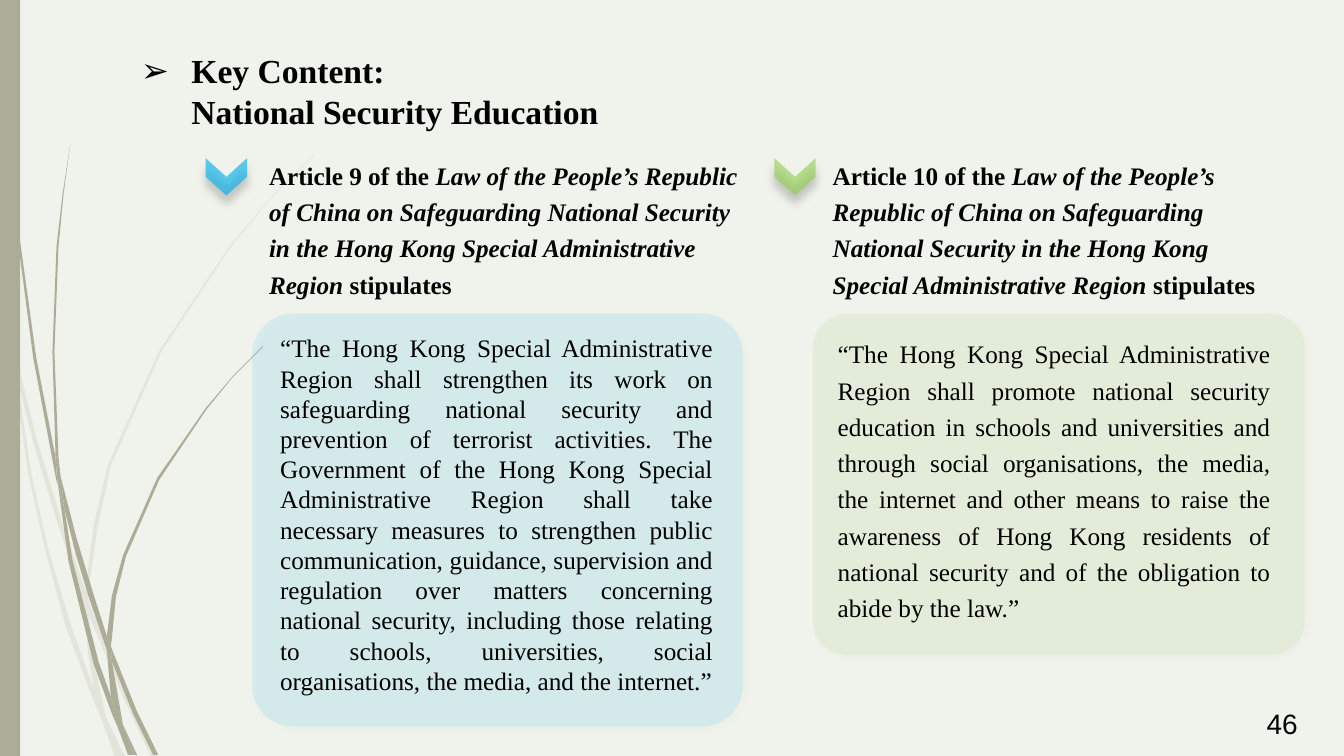
from dataclasses import dataclass

import pptx
import pptx.dml.color
import pptx.enum.shapes
import pptx.enum.text
import pptx.oxml
import pptx.oxml.ns
import pptx.util
from lxml import etree

Inches = pptx.util.Inches
Pt = pptx.util.Pt
SHAPES = pptx.enum.shapes.MSO_SHAPE
ALIGN = pptx.enum.text.PP_ALIGN


@dataclass(frozen=True)
class Theme:
    stem: str = "766F54"
    wash: str = "E3E9DB"
    blue: str = "00B0F0"
    green: str = "92D050"
    text: str = "000000"
    serif: str = "Times New Roman"
    sans: str = "Arial"
    title_size: int = 24
    body_size: int = 18
    number_size: int = 20


THEME = Theme()

# Each blade of grass is an outline in inches on the slide.
PALE_BLADES = [
    [(0.11, 3.5), (0.09, 3.22), (0, 2.82), (0, 2.99), (0.1, 3.44)],
    [(0.58, 5.22), (0.84, 5.99), (0.85, 5.86), (0.62, 5.2), (0.36, 4.34), (0.14, 3.45),
     (0.17, 3.76), (0.36, 4.5)],
    [(0.92, 6.07), (0.88, 5.96), (0.88, 6.1), (1.23, 6.94), (1.5, 7.51), (1.55, 7.51),
     (1.27, 6.92)],
    [(1.19, 7.51), (1.24, 7.51), (1.05, 7.11)],
    [(0.93, 6.83), (0.7, 6.19), (0.48, 5.45), (0.31, 4.69), (0.17, 3.76), (0.11, 3.5),
     (0.28, 4.7), (0.45, 5.46), (0.65, 6.21), (0.92, 6.93), (1.01, 7.14), (0.99, 7.07)],
    [(0.84, 5.99), (0.87, 6.46), (0.93, 6.83), (0.96, 6.92), (1.05, 7.11), (0.91, 6.46),
     (0.88, 6.1)],
    [(0.88, 5.84), (0.97, 5.22), (1.1, 4.62), (1.6, 3.49), (2.29, 2.45), (2.68, 1.98),
     (2.9, 1.75), (3.12, 1.54), (3.12, 1.53), (2.89, 1.75), (2.68, 1.97), (2.28, 2.44),
     (1.58, 3.48), (1.07, 4.61), (0.93, 5.21), (0.85, 5.84), (0.85, 5.86), (0.88, 5.96)],
    [(1.01, 7.14), (1.14, 7.51), (1.19, 7.51)],
    [(0.88, 6.08), (0.88, 5.96), (0.85, 5.86), (0.84, 5.99)],
    [(0.96, 6.92), (0.93, 6.83), (0.99, 7.07), (1.01, 7.14), (1.19, 7.51), (1.05, 7.11)],
]
DARK_BLADES = [
    [(0.07, 1.1), (0.17, 2.33), (0.33, 3.55), (0.56, 4.77), (0.57, 4.81), (0.55, 4.53),
     (0.36, 3.55), (0.19, 2.32), (0.08, 1.09), (0.05, 0.48), (0.03, 0), (0.03, 0.48)],
    [(0.88, 5.92), (1.06, 6.45), (1.06, 6.31), (0.93, 5.9), (0.76, 5.34), (0.6, 4.72),
     (0.64, 5.05), (0.75, 5.49)],
    [(1.13, 6.49), (1.1, 6.41), (1.11, 6.56), (1.32, 7.08), (1.52, 7.49), (1.57, 7.49),
     (1.36, 7.06)],
    [(1.1, 6.91), (0.98, 6.57), (0.72, 5.56), (0.64, 5.05), (0.57, 4.77), (0.68, 5.57),
     (0.93, 6.59), (1.11, 7.08), (1.17, 7.22), (1.16, 7.17)],
    [(0.6, 4.72), (0.58, 4.53), (0.54, 3.49), (0.58, 2.45), (0.63, 1.93), (0.7, 1.41),
     (0.62, 1.93), (0.56, 2.45), (0.52, 3.49), (0.55, 4.49)],
    [(1.33, 7.49), (1.36, 7.49), (1.22, 7.19)],
    [(0.57, 4.77), (0.64, 5.05), (0.6, 4.72), (0.55, 4.49), (0.55, 4.53)],
    [(1.11, 6.33), (1.15, 5.92), (1.25, 5.52), (1.58, 4.76), (2.05, 4.06), (2.31, 3.74),
     (2.46, 3.59), (2.61, 3.44), (2.6, 3.44), (2.31, 3.73), (2.04, 4.05), (1.56, 4.74),
     (1.22, 5.51), (1.11, 5.91), (1.06, 6.31), (1.1, 6.41)],
    [(1.17, 7.22), (1.27, 7.49), (1.31, 7.49)],
    [(1.06, 6.45), (1.1, 6.91), (1.16, 7.06), (1.22, 7.19), (1.11, 6.56)],
    [(1.06, 6.45), (1.11, 6.56), (1.1, 6.41), (1.06, 6.31)],
    [(1.16, 7.06), (1.1, 6.91), (1.17, 7.22), (1.3, 7.49), (1.33, 7.49), (1.22, 7.19)],
]

LAW = (" Law of the People’s Republic of China on Safeguarding National Security "
       "in the Hong Kong Special Administrative Region ")
ARTICLE_9 = (
    "“The Hong Kong Special Administrative Region shall strengthen its work on safeguarding "
    "national security and prevention of terrorist activities. The Government of the Hong Kong "
    "Special Administrative Region shall take necessary measures to strengthen public "
    "communication, guidance, supervision and regulation over matters concerning national "
    "security, including those relating to schools, universities, social organisations, the "
    "media, and the internet.”")
ARTICLE_10 = (
    "“The Hong Kong Special Administrative Region shall promote national security education in "
    "schools and universities and through social organisations, the media, the internet and "
    "other means to raise the awareness of Hong Kong residents of national security and of the "
    "obligation to abide by the law.”")


def paint(shape, color, opacity=100):
    shape.shadow.inherit = False
    shape.line.fill.background()
    shape.fill.solid()
    shape.fill.fore_color.rgb = pptx.dml.color.RGBColor.from_string(color)
    if opacity < 100:
        tint = shape.fill._xPr.find(".//" + pptx.oxml.ns.qn("a:srgbClr"))
        etree.SubElement(tint, pptx.oxml.ns.qn("a:alpha"), val=str(opacity * 1000))


def cast_shadow(shape, opacity, blur, distance, angle):
    effects = shape._element.spPr.find(pptx.oxml.ns.qn("a:effectLst"))
    effects.append(pptx.oxml.parse_xml(
        f'<a:outerShdw {pptx.oxml.ns.nsdecls("a")} blurRad="{Pt(blur)}" dist="{Pt(distance)}" '
        f'dir="{angle * 60000}" rotWithShape="0"><a:srgbClr val="{THEME.text}">'
        f'<a:alpha val="{opacity * 1000}"/></a:srgbClr></a:outerShdw>'))


def add_block(shapes, kind, box, color, opacity=100):
    shape = shapes.add_shape(kind, *map(Inches, box))
    paint(shape, color, opacity)
    return shape


def add_text(shapes, box, size, font=THEME.serif, bold=False, align=ALIGN.LEFT, spacing=None):
    """Add a wrapping text box and return its frame and first paragraph."""
    frame = shapes.add_textbox(*map(Inches, box)).text_frame
    frame.word_wrap = True
    paragraph = frame.paragraphs[0]
    paragraph.alignment = align
    if spacing:
        paragraph.line_spacing = spacing
    paragraph.font.name = font
    paragraph.font.size = Pt(size)
    paragraph.font.bold = bold
    paragraph.font.color.rgb = pptx.dml.color.RGBColor.from_string(THEME.text)
    return frame, paragraph


def add_grass(slide, blades, opacity):
    shapes = slide.shapes.add_group_shape().shapes
    for blade in blades:
        start, *others = [(Inches(x), Inches(y)) for x, y in blade]
        builder = shapes.build_freeform(*start)
        builder.add_line_segments(others, close=True)
        paint(builder.convert_to_shape(), THEME.stem, opacity)


def add_backdrop(slide, width, height):
    add_grass(slide, PALE_BLADES, 20)
    add_grass(slide, DARK_BLADES, 100)
    add_block(slide.shapes, SHAPES.RECTANGLE, (0, 0, 0.2, height), THEME.stem)
    add_block(slide.shapes, SHAPES.RECTANGLE, (0, 0, width, height), THEME.wash, 50)


def add_title(slide, box):
    _, paragraph = add_text(slide.shapes, box, THEME.title_size, bold=True)
    properties = paragraph._p.get_or_add_pPr()
    properties.set("marL", str(Inches(0.5)))
    properties.set("indent", str(-Inches(0.5)))
    properties.insert(0, etree.Element(pptx.oxml.ns.qn("a:buFont"), typeface=THEME.sans))
    properties.insert(1, etree.Element(pptx.oxml.ns.qn("a:buChar"), char="➢"))
    paragraph.text = "Key Content: \vNational Security Education"


def add_article(slide, box, color, number, quote, chevron_left, heading, body, spacing):
    """Place a quotation card in the box, with its chevron and heading above it."""
    left, top, width, _ = box
    heading_left, heading_width = heading
    body_left, body_height = body
    shapes = slide.shapes.add_group_shape().shapes
    card = add_block(shapes, SHAPES.ROUNDED_RECTANGLE, box, color, 10)
    card.adjustments[0] = 0.1
    cast_shadow(card, 13, 4, 3, 45)

    _, quotation = add_text(shapes, (body_left, top + 0.14, 4.49, body_height),
                            THEME.body_size, align=ALIGN.JUSTIFY, spacing=spacing)
    quotation.text = quote

    chevron = add_block(shapes, SHAPES.CHEVRON, (chevron_left, top - 1.56, 0.37, 0.41), color, 62)
    chevron.rotation = 90
    cast_shadow(chevron, 30, 6, 6, 90)

    _, title = add_text(shapes, (heading_left, top - 1.63, heading_width, 1.56),
                        THEME.body_size, bold=True, spacing=1.2)
    for words, italic in ((f"Article {number} of the", False), (LAW, True), ("stipulates", False)):
        run = title.add_run()
        run.text = words
        run.font.italic = italic


def add_page_number(slide, box):
    frame, paragraph = add_text(slide.shapes, box, THEME.number_size, THEME.sans, align=ALIGN.RIGHT)
    frame.vertical_anchor = pptx.enum.text.MSO_ANCHOR.MIDDLE
    paragraph.text = "46"


def main():
    presentation = pptx.Presentation()
    presentation.slide_width = Inches(13.33)
    presentation.slide_height = Inches(7.5)
    slide = presentation.slides.add_slide(presentation.slide_layouts[6])
    add_backdrop(slide, 13.33, 7.5)
    add_article(slide, (2.5, 3.11, 4.87, 4.1), THEME.blue, 9, ARTICLE_9,
                2.06, (2.57, 4.86), (2.68, 5.15), None)
    add_article(slide, (8.06, 3.11, 4.88, 3.39), THEME.green, 10, ARTICLE_10,
                7.7, (8.16, 4.58), (8.21, 3.09), 1.2)
    add_title(slide, (1.3, 0.45, 7.81, 0.55))
    add_page_number(slide, (9.97, 6.98, 3, 0.4))
    presentation.save("out.pptx")


if __name__ == "__main__":
    main()
